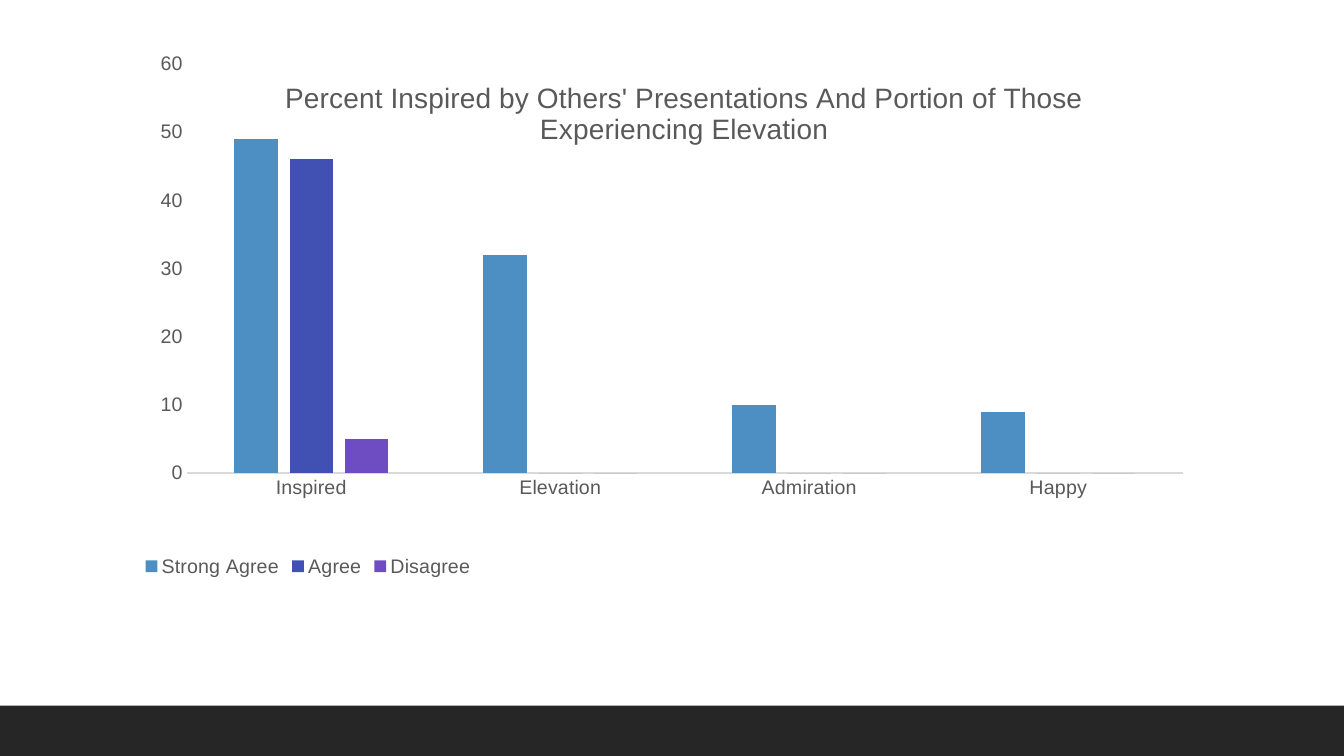
from pptx import Presentation
from pptx.chart.data import CategoryChartData
from pptx.dml.color import RGBColor
from pptx.enum.chart import XL_CHART_TYPE, XL_LEGEND_POSITION, XL_TICK_MARK
from pptx.enum.shapes import MSO_SHAPE
from pptx.oxml import parse_xml
from pptx.oxml.ns import nsdecls, qn
from pptx.util import Inches, Pt

COLUMN = XL_CHART_TYPE.COLUMN_CLUSTERED
BOTTOM = XL_LEGEND_POSITION.BOTTOM
NO_TICK = XL_TICK_MARK.NONE
RECT = MSO_SHAPE.RECTANGLE

FACE = "Arial"
DARK = RGBColor(0x26, 0x26, 0x26)
GRAY = RGBColor(0x59, 0x59, 0x59)
PALE = RGBColor(0xD9, 0xD9, 0xD9)
BLUE = RGBColor(0x4D, 0x8E, 0xC3)
NAVY = RGBColor(0x40, 0x50, 0xB3)
PLUM = RGBColor(0x6E, 0x4D, 0xC3)

TITLE = "Percent Inspired by Others' Presentations And Portion of Those Experiencing Elevation"
GROUPS = ["Inspired", "Elevation", "Admiration", "Happy"]
SERIES = [
    ("Strong Agree", (49, 32, 10, 9), BLUE),
    ("Agree", (46, 0, 0, 0), NAVY),
    ("Disagree", (5, 0, 0, 0), PLUM),
]


def set_font(font, size=14, color=GRAY, bold=False):
    font.name = FACE
    font.size = Pt(size)
    font.bold = bold
    font.color.rgb = color


def write(frame, text, **style):
    run = frame.paragraphs[0].add_run()
    run.text = text
    set_font(run.font, **style)


def place(part, index, target=None, **spots):
    for old in part.findall(qn("c:layout")):
        part.remove(old)
    inner = f'<c:layoutTarget val="{target}"/>' if target else ""
    modes = "".join(f'<c:{key}Mode val="edge"/>' for key in spots if key in "xy")
    sizes = "".join(f'<c:{key} val="{value}"/>' for key, value in spots.items())
    part.insert(index, parse_xml(
        f'<c:layout {nsdecls("c")}><c:manualLayout>{inner}{modes}{sizes}'
        "</c:manualLayout></c:layout>"))


def add_band(slide, left, top, width, height):
    band = slide.shapes.add_shape(
        RECT, Inches(left), Inches(top), Inches(width), Inches(height))
    band.shadow.inherit = False
    band.fill.solid()
    band.fill.fore_color.rgb = DARK
    band.line.fill.background()


def format_axes(chart):
    for axis in (chart.category_axis, chart.value_axis):
        axis.has_major_gridlines = False
        axis.major_tick_mark = NO_TICK
        axis.minor_tick_mark = NO_TICK
        set_font(axis.tick_labels.font)
    base = chart.category_axis.format.line
    base.color.rgb = PALE
    base.width = Pt(0.75)
    scale = chart.value_axis
    scale.minimum_scale, scale.maximum_scale, scale.major_unit = 0, 60, 10
    scale.format.line.fill.background()


def add_survey(slide, left, top, width, height):
    data = CategoryChartData()
    data.categories = GROUPS
    for name, values, _ in SERIES:
        data.add_series(name, values)
    chart = slide.shapes.add_chart(
        COLUMN, Inches(left), Inches(top), Inches(width), Inches(height), data).chart
    set_font(chart.font)
    format_axes(chart)

    plot = chart.plots[0]
    plot.vary_by_categories = False
    plot.gap_width = 219
    plot.overlap = -27
    for series, (_, _, color) in zip(plot.series, SERIES):
        series.format.fill.solid()
        series.format.fill.fore_color.rgb = color

    chart.has_title = True
    write(chart.chart_title.text_frame, TITLE, size=20)
    chart.has_legend = True
    chart.legend.position = BOTTOM
    chart.legend.include_in_layout = False
    set_font(chart.legend.font)

    area = chart.element.find(".//" + qn("c:plotArea"))
    place(area, 0, target="inner", x=0.044, y=0.022, w=0.919, h=0.67)
    place(area.getparent().find(qn("c:title")), 1, x=0.13, y=0.04)
    place(area.getparent().find(qn("c:legend")), 1, x=0.0, y=0.82)


def main():
    deck = Presentation()
    deck.slide_width = Inches(13.33)
    deck.slide_height = Inches(7.5)
    slide = deck.slides.add_slide(deck.slide_layouts[6])
    add_band(slide, 0, 7, 13.33, 0.5)
    add_survey(slide, 1.38, 0.5, 10.75, 6.06)
    deck.save("out.pptx")


if __name__ == "__main__":
    main()
